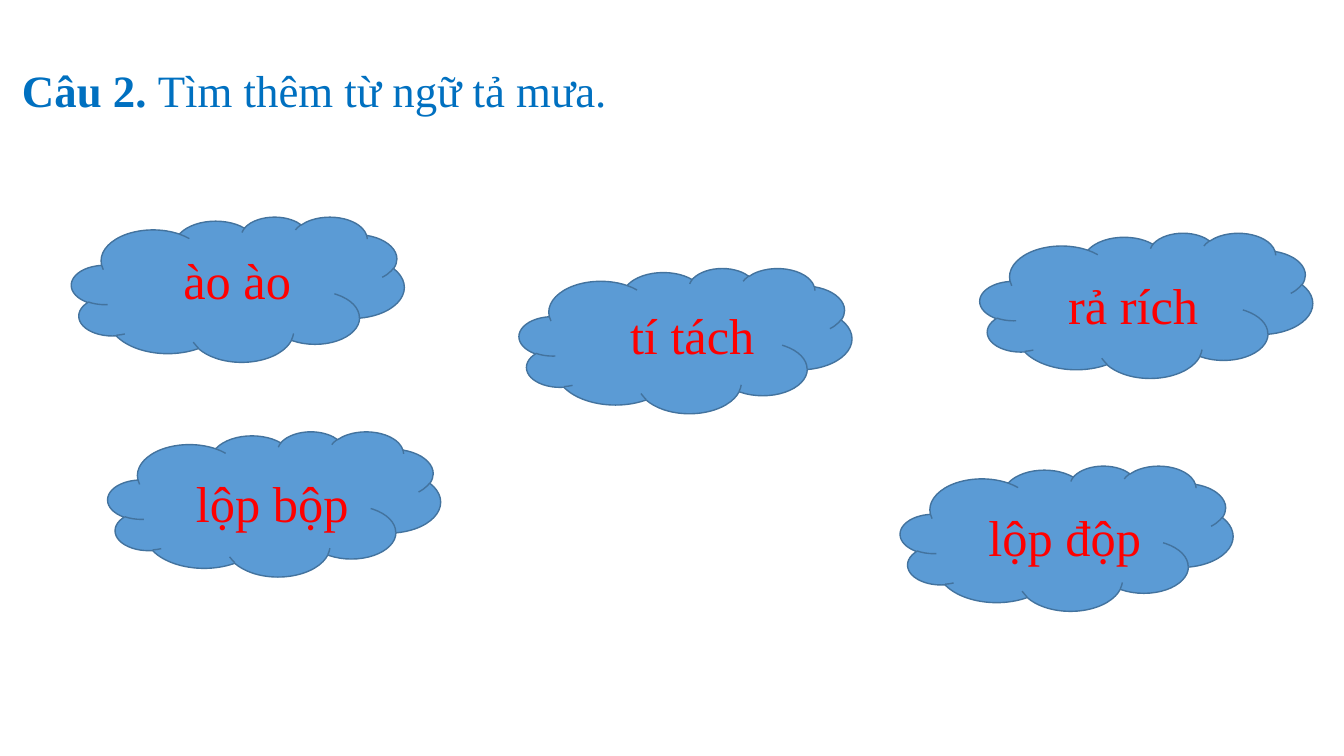
from pptx import Presentation
from pptx.dml.color import RGBColor
from pptx.enum.shapes import MSO_SHAPE
from pptx.enum.text import MSO_AUTO_SIZE, PP_ALIGN
from pptx.util import Emu, Pt

CLOUD = MSO_SHAPE.CLOUD
JUSTIFY = PP_ALIGN.JUSTIFY
LEFT = PP_ALIGN.LEFT
FIT_SHAPE = MSO_AUTO_SIZE.SHAPE_TO_FIT_TEXT

EMU_PER_PX = 9144  # 100 px to the inch
SLIDE_SIZE = (1333, 750)
CLOUD_SIZE = (330, 144)
WORD_SIZE = (208, 71)

BLUE = "0070C0"
RED = "FF0000"
CLOUD_FILL = "5B9BD5"
CLOUD_LINE = "43739E"

# Word, cloud corner, offset of the word from that corner
RAIN_WORDS = [
    ("ào ào", (71, 215), (101, 27)),
    ("tí tách", (515, 266), (100, 31)),
    (" lộp bộp", (107, 428), (65, 35)),
    (" lộp độp", (893, 462), (65, 35)),
    (" rả rích", (972, 231), (65, 36)),
]


def px(*lengths):
    return [Emu(length * EMU_PER_PX) for length in lengths]


def color(hex_value):
    return RGBColor.from_string(hex_value)


def add_text(slide, corner, size, runs, points, hex_value, align=LEFT):
    frame = slide.shapes.add_textbox(*px(*corner, *size)).text_frame
    frame.word_wrap = True
    frame.auto_size = FIT_SHAPE
    paragraph = frame.paragraphs[0]
    paragraph.alignment = align
    for words, bold in runs:
        run = paragraph.add_run()
        run.text = words
        font_format = {"name": "Times New Roman", "size": Pt(points), "bold": bold}
        for attribute, value in font_format.items():
            setattr(run.font, attribute, value)
        run.font.color.rgb = color(hex_value)


def add_cloud(slide, corner):
    cloud = slide.shapes.add_shape(CLOUD, *px(*corner, *CLOUD_SIZE))
    cloud.shadow.inherit = False
    cloud.fill.solid()
    cloud.fill.fore_color.rgb = color(CLOUD_FILL)
    cloud.line.color.rgb = color(CLOUD_LINE)
    cloud.line.width = Pt(1)


def main():
    deck = Presentation()
    deck.slide_width, deck.slide_height = px(*SLIDE_SIZE)
    slide = deck.slides.add_slide(deck.slide_layouts[6])

    # Question
    question = [("Câu 2. ", True), ("Tìm thêm từ ngữ tả mưa.", False)]
    add_text(slide, (12, 57), (1290, 64), question, 32, BLUE, JUSTIFY)

    # Rain words on clouds
    for word, (left, top), (right_by, down_by) in RAIN_WORDS:
        add_cloud(slide, (left, top))
        word_corner = (left + right_by, top + down_by)
        add_text(slide, word_corner, WORD_SIZE, [(word, False)], 36, RED)

    deck.save("out.pptx")


if __name__ == "__main__":
    main()
